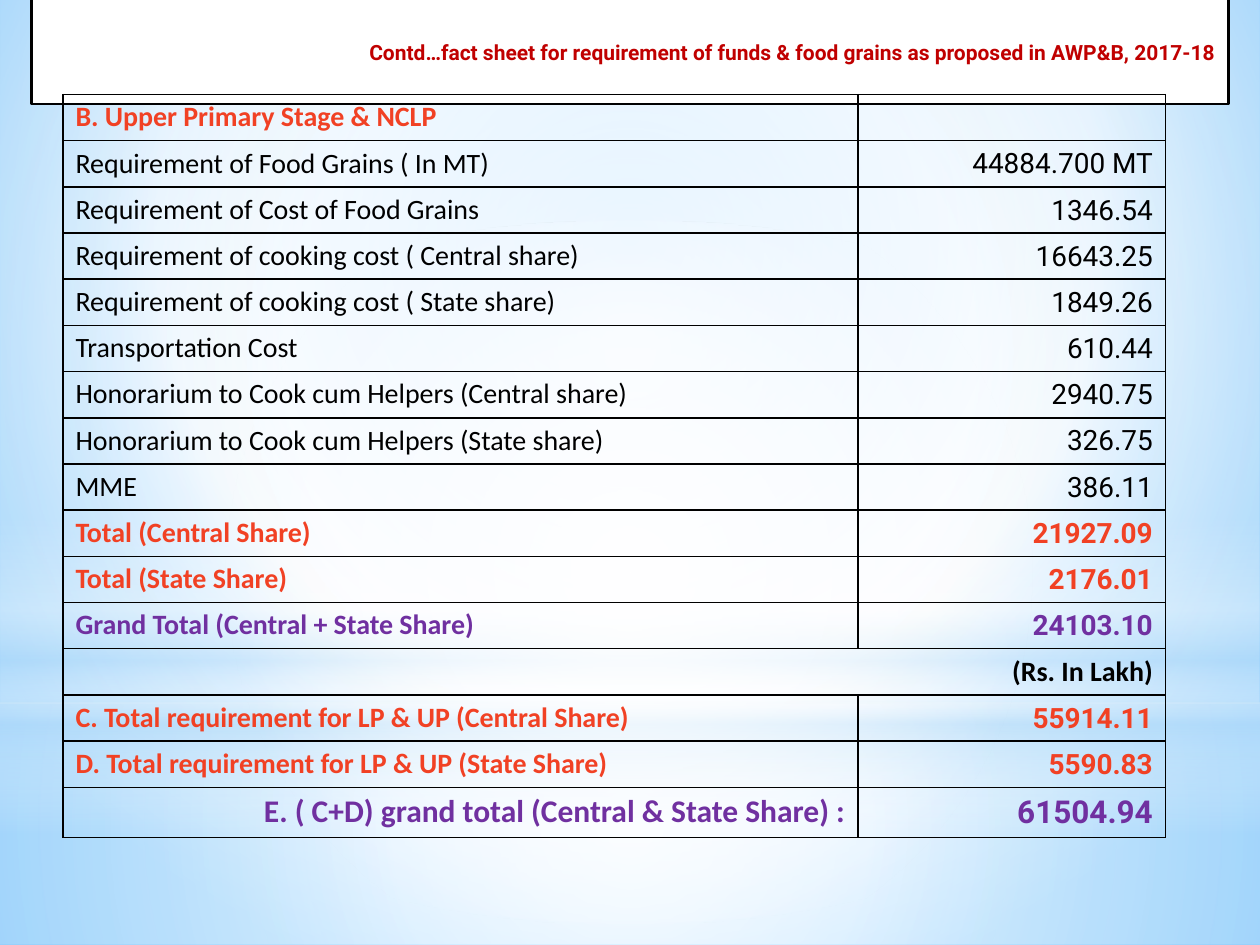
from dataclasses import dataclass

from pptx import Presentation
from pptx import util as u
from pptx.dml.color import RGBColor
from pptx.enum import shapes, text
from pptx.oxml import parse_xml
from pptx.oxml.ns import nsdecls


@dataclass(frozen=True)
class Theme:
    black: str = "000000"
    white: str = "FFFFFF"
    pale_blue: str = "B4DCFA"
    title: str = "C00000"
    total: str = "F14124"
    grand: str = "7030A0"
    label_font: str = "Calibri"
    number_font: str = "Roboto"
    title_size: int = 12
    body_size: int = 16
    final_size: int = 18


THEME = Theme()
WIDTH, HEIGHT = 10, 7.5
COLUMNS = [6.31, 2.44]
ROW_HEIGHT, FINAL_HEIGHT = 5.5 / 15, 0.4
CENTRE = (50, 50, 50, 50)

# label, value, colour (black rows are plain, coloured rows are bold)
ROWS = [
    ("B. Upper Primary Stage & NCLP", "", THEME.total),
    ("Requirement of Food Grains ( In MT)", "44884.700 MT", THEME.black),
    ("Requirement of Cost of Food Grains", "1346.54", THEME.black),
    ("Requirement of cooking cost ( Central share)", "16643.25", THEME.black),
    ("Requirement of cooking cost ( State share)", "1849.26", THEME.black),
    ("Transportation Cost", "610.44", THEME.black),
    ("Honorarium to Cook cum Helpers (Central share)", "2940.75", THEME.black),
    ("Honorarium to Cook cum Helpers (State share)", "326.75", THEME.black),
    ("MME", "386.11", THEME.black),
    ("Total (Central Share)", "21927.09", THEME.total),
    ("Total (State Share)", "2176.01", THEME.total),
    ("Grand Total (Central + State Share)", "24103.10", THEME.grand),
    ("(Rs. In Lakh)", None, THEME.black),
    ("C. Total requirement for LP & UP (Central Share)", "55914.11", THEME.total),
    ("D. Total requirement for LP & UP (State Share)", "5590.83", THEME.total),
    ("E. ( C+D) grand total (Central & State Share) :", "61504.94", THEME.grand),
]


def paint_gradient(fill, element, stops, focus=None):
    """Fill with (position, colour, opacity) stops, circular around focus or else downwards."""
    fill.background()
    stop_xml = "".join(
        f'<a:gs pos="{position * 1000}"><a:srgbClr val="{colour}">'
        f'<a:alpha val="{opacity * 1000}"/></a:srgbClr></a:gs>'
        for position, colour, opacity in stops)
    if focus:
        left, top, right, bottom = (share * 1000 for share in focus)
        direction = (f'<a:path path="circle"><a:fillToRect l="{left}" t="{top}" '
                     f'r="{right}" b="{bottom}"/></a:path>')
    else:
        direction = '<a:lin ang="5400000" scaled="0"/>'
    gradient = parse_xml(f'<a:gradFill {nsdecls("a")} rotWithShape="1">'
                         f'<a:gsLst>{stop_xml}</a:gsLst>{direction}</a:gradFill>')
    empty_fill = element.xpath(".//a:noFill")[0]
    empty_fill.getparent().replace(empty_fill, gradient)


def add_glow(slide, kind, top, height, stops, focus=None):
    shape = slide.shapes.add_shape(
        kind, 0, u.Inches(top), u.Inches(WIDTH), u.Inches(height))
    shape.shadow.inherit = False
    paint_gradient(shape.fill, shape.element, stops, focus)
    shape.line.fill.background()


def add_backdrop(slide):
    white, blue = THEME.white, THEME.pale_blue
    rectangle, oval = shapes.MSO_SHAPE.RECTANGLE, shapes.MSO_SHAPE.OVAL
    paint_gradient(slide.background.fill, slide.element,
                   [(0, "9ED5FF", 100), (60, white, 100), (100, "5BB9FF", 100)],
                   (20, 10, 20, 60))
    add_glow(slide, rectangle, 5.58, 1.92,
             [(0, white, 91), (37, white, 76), (100, blue, 79)], CENTRE)
    add_glow(slide, rectangle, 0, 5.58,
             [(0, white, 89), (48, white, 62), (100, blue, 79)], CENTRE)
    add_glow(slide, rectangle, 4.12, 2.5,
             [(0, white, 0), (29, white, 30), (45, blue, 40),
              (55, white, 26), (65, blue, 60), (100, white, 0)])
    add_glow(slide, oval, 1.75, 5.58, [(0, white, 100), (56, white, 0)], CENTRE)


def format_paragraph(paragraph, font_name, size, colour, bold, right):
    paragraph.alignment = text.PP_ALIGN.RIGHT if right else text.PP_ALIGN.LEFT
    font = paragraph.font
    font.name, font.size, font.bold = font_name, u.Pt(size), bold
    font.color.rgb = RGBColor.from_string(colour)


def place_title(slide, wording):
    title = slide.shapes.title
    title.element.getparent().append(title.element)  # in front of the backdrop
    title.left, title.top = u.Inches(0.25), u.Inches(0.25)
    title.width, title.height = u.Inches(9.5), u.Inches(0.32)
    title.fill.solid()
    title.fill.fore_color.rgb = RGBColor.from_string(THEME.white)
    title.line.color.rgb = RGBColor.from_string(THEME.black)
    title.line.width = u.Pt(1.25)
    frame = title.text_frame
    frame.text = wording
    frame.word_wrap = True
    frame.auto_size = text.MSO_AUTO_SIZE.SHAPE_TO_FIT_TEXT
    format_paragraph(frame.paragraphs[0], THEME.number_font,
                     THEME.title_size, THEME.title, True, True)


def draw_borders(cell):
    properties = cell._tc.get_or_add_tcPr()
    for index, side in enumerate("LRTB"):
        properties.insert(index, parse_xml(
            f'<a:ln{side} {nsdecls("a")} w="{u.Pt(1)}"><a:solidFill>'
            f'<a:srgbClr val="{THEME.black}"/></a:solidFill></a:ln{side}>'))


def fill_cell(cell, wording, font_name, size, colour, bold, right):
    cell.text = wording
    cell.vertical_anchor = text.MSO_ANCHOR.BOTTOM
    cell.margin_top = u.Inches(0.01)
    format_paragraph(cell.text_frame.paragraphs[0], font_name, size, colour, bold, right)


def add_fact_table(slide):
    height = ROW_HEIGHT * (len(ROWS) - 1) + FINAL_HEIGHT
    table = slide.shapes.add_table(
        len(ROWS), len(COLUMNS), u.Inches(0.5), u.Inches(0.75),
        u.Inches(sum(COLUMNS)), u.Inches(height)).table
    table.first_row = table.horz_banding = False
    for column, width in zip(table.columns, COLUMNS):
        column.width = u.Inches(width)
    for index, (label, value, colour) in enumerate(ROWS):
        final, unit_row = index == len(ROWS) - 1, value is None
        table.rows[index].height = u.Inches(FINAL_HEIGHT if final else ROW_HEIGHT)
        size = THEME.final_size if final else THEME.body_size
        bold = colour != THEME.black or unit_row
        label_cell, value_cell = table.cell(index, 0), table.cell(index, 1)
        for cell in (label_cell, value_cell):
            cell.fill.background()
            draw_borders(cell)
        fill_cell(label_cell, label, THEME.label_font, size, colour, bold, final or unit_row)
        if unit_row:
            label_cell.merge(value_cell)
        else:
            fill_cell(value_cell, value, THEME.number_font, size, colour, bold, True)


def main():
    presentation = Presentation()
    presentation.slide_width, presentation.slide_height = u.Inches(WIDTH), u.Inches(HEIGHT)
    slide = presentation.slides.add_slide(presentation.slide_layouts.get_by_name("Title Only"))
    add_backdrop(slide)
    place_title(slide, "Contd…fact sheet for requirement of funds & food grains "
                       "as proposed in AWP&B, 2017-18")
    add_fact_table(slide)
    presentation.save("out.pptx")


if __name__ == "__main__":
    main()
